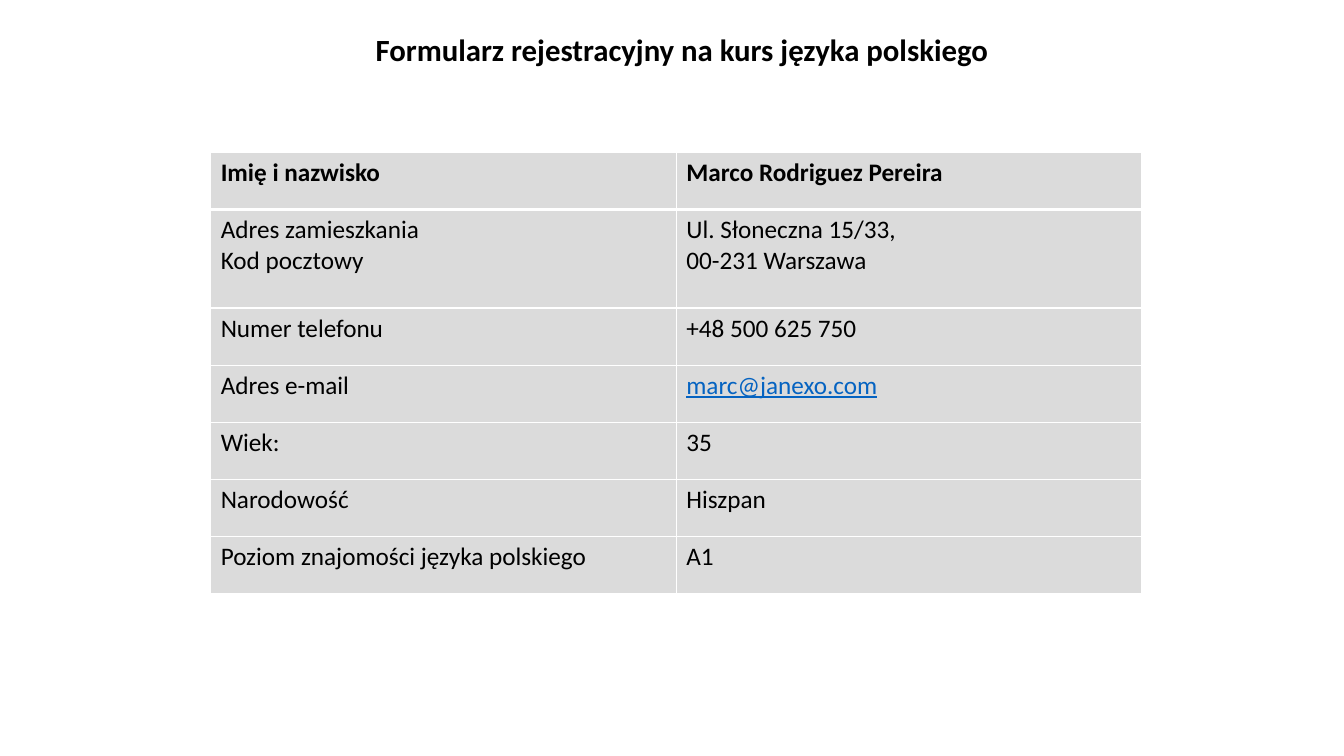
import pptx
import pptx.dml.color
import pptx.enum.text
import pptx.oxml.ns
import pptx.util
from lxml import etree

Pt = pptx.util.Pt

BLACK = "000000"
WHITE = "FFFFFF"
GREY = "DBDBDB"
BLUE = "0563C1"

ROWS = [
    ("Imię i nazwisko", "Marco Rodriguez Pereira"),
    ("Adres zamieszkania\nKod pocztowy", "Ul. Słoneczna 15/33,\n00-231 Warszawa"),
    ("Numer telefonu", "+48 500 625 750"),
    ("Adres e-mail", "marc@janexo.com"),
    ("Wiek:", "35"),
    ("Narodowość", "Hiszpan"),
    ("Poziom znajomości języka polskiego", "A1"),
]


def color(code):
    return pptx.dml.color.RGBColor.from_string(code)


def style(frame, size, bold=False, code=BLACK, under=False):
    for para in frame.paragraphs:
        for run in para.runs:
            font = run.font
            font.name = "Calibri"
            font.size = Pt(size)
            font.bold = bold
            font.underline = under
            font.color.rgb = color(code)


def add_title(slide, text):
    box = slide.shapes.add_textbox(Pt(212.4), Pt(18.7), Pt(549.4), Pt(33.8))
    frame = box.text_frame
    frame.word_wrap = True
    frame.text = text
    frame.paragraphs[0].alignment = pptx.enum.text.PP_ALIGN.CENTER
    style(frame, 22, bold=True)


def add_edge(cell, side, width):
    """Draw a white border on one side: L, R, T or B."""
    qn = pptx.oxml.ns.qn
    props = cell._tc.get_or_add_tcPr()
    line = etree.SubElement(props, qn(f"a:ln{side}"), w=str(Pt(width)))
    fill = etree.SubElement(line, qn("a:solidFill"))
    etree.SubElement(fill, qn("a:srgbClr"), val=WHITE)


def fill_cell(cell, text, row):
    cell.text_frame.text = text
    mail = "@" in text
    style(cell.text_frame, 18, bold=row == 0,
          code=BLUE if mail else BLACK, under=mail)
    # Borders must come before the fill in the cell properties
    widths = {"L": 1, "R": 1, "T": 3 if row == 1 else 1, "B": 3 if row == 0 else 1}
    for side, width in widths.items():
        add_edge(cell, side, width)
    cell.fill.solid()
    cell.fill.fore_color.rgb = color(GREY)


def add_form(slide, rows):
    frame = slide.shapes.add_table(
        len(rows), 2, Pt(150.5), Pt(108.9), Pt(665.2), Pt(315.1))
    table = frame.table
    for col in table.columns:
        col.width = Pt(332.6)
    for row, texts in enumerate(rows):
        table.rows[row].height = Pt(70.3 if "\n" in texts[0] else 40.8)
        for col, text in enumerate(texts):
            fill_cell(table.cell(row, col), text, row)


def main():
    deck = pptx.Presentation()
    deck.slide_width = Pt(960)
    deck.slide_height = Pt(540)
    slide = deck.slides.add_slide(deck.slide_layouts[6])
    add_title(slide, "Formularz rejestracyjny na kurs języka polskiego")
    add_form(slide, ROWS)
    deck.save("out.pptx")


if __name__ == "__main__":
    main()
